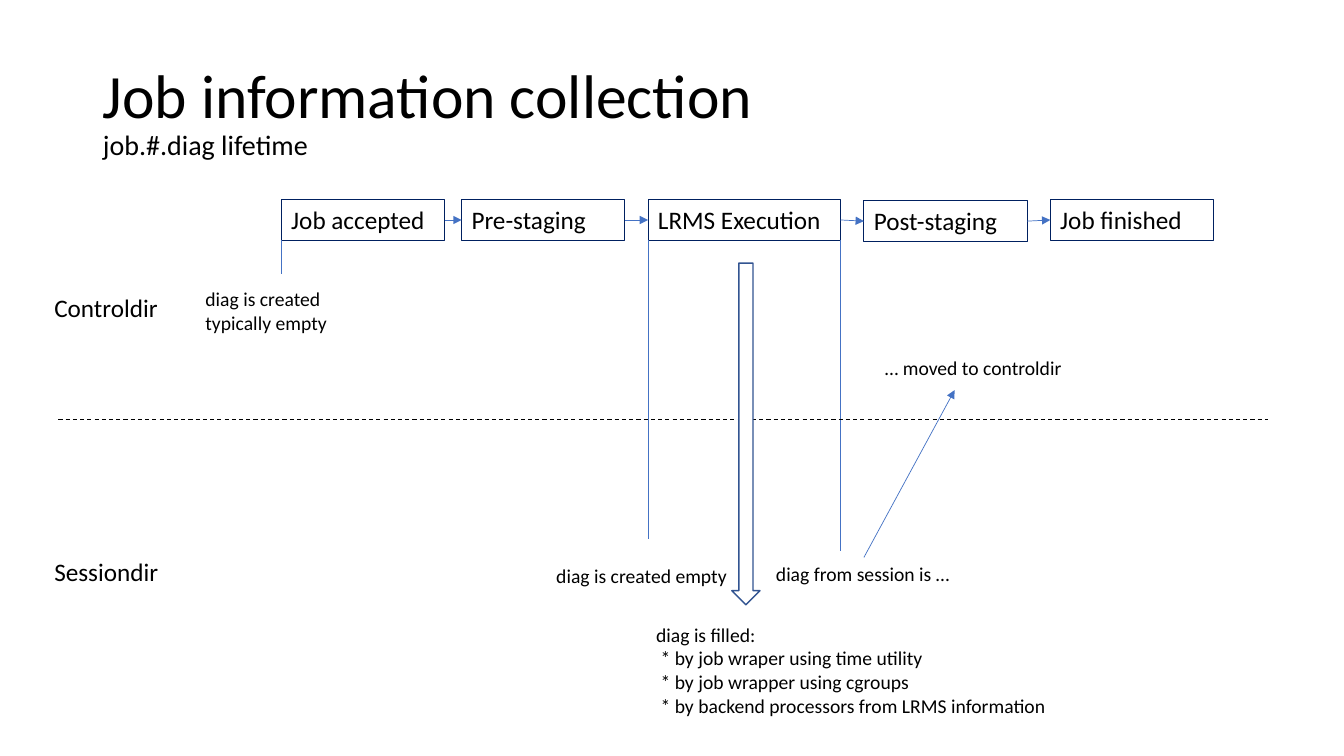
from lxml.etree import SubElement
from pptx import Presentation
from pptx.dml.color import RGBColor
from pptx.enum.dml import MSO_LINE
from pptx.enum.shapes import MSO_CONNECTOR, MSO_SHAPE
from pptx.enum.text import MSO_ANCHOR, MSO_AUTO_SIZE, PP_ALIGN
from pptx.oxml.ns import qn
from pptx.util import Inches, Pt

WIDTH, HEIGHT = Inches(13.33), Inches(7.5)
FONT, BLACK, WHITE = "Calibri", "000000", "FFFFFF"
NAVY, BLUE, ARROW_BLUE = "002060", "4472C4", "325491"
STAGE_TOP, STAGE_HEIGHT = 26.4, 5.4
STAGE_BOTTOM = STAGE_TOP + STAGE_HEIGHT
STAGES = [
    ("Job accepted", 20.93, STAGE_TOP, 12.15),
    ("Pre-staging", 34.35, STAGE_TOP, 12.15),
    ("LRMS Execution", 48.22, STAGE_TOP, 14.32),
    ("Post-staging", 64.28, STAGE_TOP + 0.15, 12.15),
    ("Job finished", 78.15, STAGE_TOP, 12.15),
]
LABELS = [
    ("Controldir", 3.3, 38, 9.3, 5.33, 18, False),
    ("Sessiondir", 3.3, 72.93, 9.3, 5.33, 18, False),
    ("diag is created typically empty", 14.55, 37.33, 13.12, 7.6, 14, True),
    ("diag is created empty", 40.65, 73.87, 14.63, 4.53, 14, True),
    ("diag from session is …", 57, 73.73, 14.55, 4.53, 14, False),
    ("… moved to controldir", 65.1, 46.4, 14.78, 4.53, 14, False),
    ("diag is filled:\n * by job wraper using time utility\n"
     " * by job wrapper using cgroups\n"
     " * by backend processors from LRMS information",
     48.08, 81.73, 32.48, 13.87, 14, True),
]


def color(value):
    return RGBColor.from_string(value)


def across(share):
    return round(WIDTH * share / 100)


def down(share):
    return round(HEIGHT * share / 100)


def area(left, top, width, height):
    return across(left), down(top), across(width), down(height)


def add_span(para, text, size=18, ink=BLACK):
    span = para.add_run()
    span.text = text
    span.font.name = FONT
    span.font.size = Pt(size)
    span.font.color.rgb = color(ink)


def write(frame, text, size=18, wrap=True, anchor=MSO_ANCHOR.TOP):
    frame.word_wrap = wrap
    frame.vertical_anchor = anchor
    for index, line in enumerate(text.split("\n")):
        para = frame.add_paragraph() if index else frame.paragraphs[0]
        para.alignment = PP_ALIGN.LEFT
        add_span(para, line, size)


def add_title(page):
    title = page.shapes.title
    title.left, title.top, title.width, title.height = area(6.9, 5.33, 86.25, 19.33)
    frame = title.text_frame
    frame.word_wrap = True
    frame.auto_size = MSO_AUTO_SIZE.NONE
    frame.vertical_anchor = MSO_ANCHOR.MIDDLE
    para = frame.paragraphs[0]
    para.alignment = PP_ALIGN.LEFT
    para.line_spacing = 0.9
    add_span(para, "Job information collection", 44)
    para.add_line_break()
    add_span(para, "job.#.diag lifetime", 20)


def add_outline(page, kind, place, ink, weight, fill=None):
    box = page.shapes.add_shape(kind, *area(*place))
    box.shadow.inherit = False
    if fill:
        box.fill.solid()
        box.fill.fore_color.rgb = color(fill)
    else:
        box.fill.background()
    box.line.color.rgb = color(ink)
    box.line.width = Pt(weight)
    return box


def add_stage(page, name, left, top, width):
    box = add_outline(page, MSO_SHAPE.RECTANGLE, (left, top, width, STAGE_HEIGHT), NAVY, 0.75)
    write(box.text_frame, name)
    return box


def add_label(page, text, left, top, width, height, size, wrap):
    box = page.shapes.add_textbox(*area(left, top, width, height))
    write(box.text_frame, text, size, wrap)


def add_line(page, start=(0, 0), end=(0, 0), ink=BLUE, weight=0.5, arrow=False, dash=None):
    line = page.shapes.add_connector(
        MSO_CONNECTOR.STRAIGHT, across(start[0]), down(start[1]), across(end[0]), down(end[1]))
    line.line.color.rgb = color(ink)
    line.line.width = Pt(weight)
    if dash:
        line.line.dash_style = dash
    properties = line._element.spPr
    if arrow:
        SubElement(properties.find(qn("a:ln")), qn("a:tailEnd"), type="triangle")
    SubElement(properties, qn("a:effectLst"))
    return line


def main():
    deck = Presentation()
    deck.slide_width, deck.slide_height = WIDTH, HEIGHT
    page = deck.slides.add_slide(deck.slide_layouts[5])
    add_title(page)

    boxes = [add_stage(page, *stage) for stage in STAGES]
    for before, after in zip(boxes, boxes[1:]):
        link = add_line(page, arrow=True)
        link.begin_connect(before, 3)
        link.end_connect(after, 1)

    execution_left, execution_width = STAGES[2][1], STAGES[2][3]
    for x, bottom in [(STAGES[0][1], 36.27), (execution_left, 71.33),
                      (execution_left + execution_width, 72.93)]:
        add_line(page, (x, STAGE_BOTTOM), (x, bottom))
    add_line(page, (4.35, 55.47), (94.35, 55.47), BLACK, 0.75, dash=MSO_LINE.DASH)
    add_line(page, (64.28, 73.73), (71.03, 51.6), arrow=True)
    add_outline(page, MSO_SHAPE.DOWN_ARROW, (54.45, 34.8, 2.1, 45.2), ARROW_BLUE, 1, WHITE)

    for label in LABELS:
        add_label(page, *label)
    deck.save("out.pptx")


if __name__ == "__main__":
    main()
